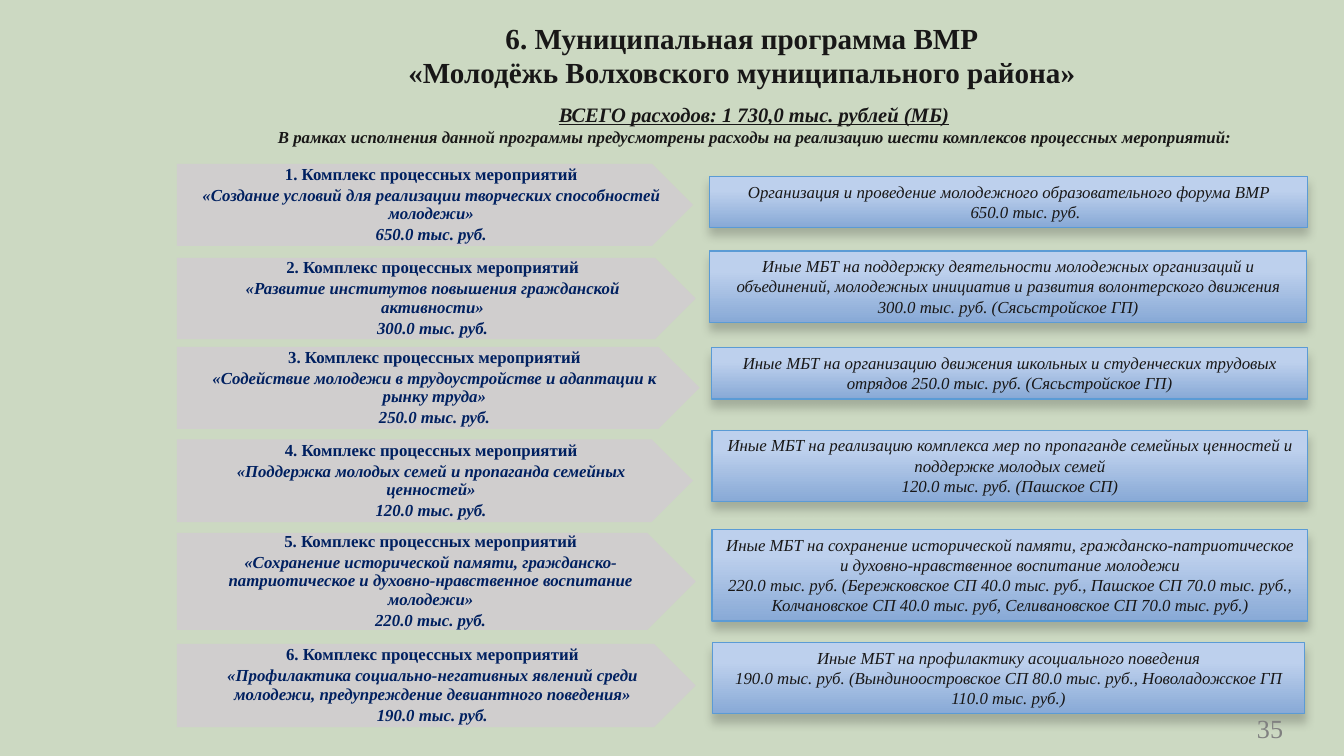
from pptx import Presentation
from pptx.dml.color import RGBColor
from pptx.enum.shapes import MSO_SHAPE
from pptx.enum.text import MSO_ANCHOR, MSO_AUTO_SIZE, PP_ALIGN
from pptx.oxml import parse_xml
from pptx.oxml.ns import nsdecls
from pptx.util import Pt

TITLE = "6. Муниципальная программа ВМР\v«Молодёжь Волховского муниципального района»"
TOTAL = "ВСЕГО расходов: 1 730,0 тыс. рублей (МБ)"
INTRO = ("В рамках исполнения данной программы предусмотрены расходы "
         "на реализацию шести комплексов процессных мероприятий:")
HEAD = "Комплекс процессных мероприятий"
PAGE = "35"

# Plate: name, sum, (top, width, height). Card: paragraphs, lines, (left, top, width).
ROWS = [
    ("«Создание условий для реализации творческих способностей молодежи»",
     "650.0 тыс. руб.", (87.8, 276.5, 43.9),
     ["Организация и проведение молодежного образовательного форума ВМР",
      "650.0 тыс. руб."], 2, (380.2, 94.5, 320.2)),
    ("«Развитие институтов повышения гражданской активности»",
     "300.0 тыс. руб.", (138.2, 277.9, 43.5),
     ["Иные МБТ на поддержку деятельности молодежных организаций и объединений, "
      "молодежных инициатив и развития волонтерского движения",
      "300.0 тыс. руб. (Сясьстройское ГП)"], 3, (380.2, 134.5, 319.6)),
    ("«Содействие молодежи в трудоустройстве и адаптации к рынку труда»",
     "250.0 тыс. руб.", (185.8, 280, 43.9),
     ["Иные МБТ на организацию движения школьных и студенческих трудовых "
      "отрядов 250.0 тыс. руб. (Сясьстройское ГП)"], 2, (381, 186.3, 319.5)),
    ("«Поддержка молодых семей и пропаганда семейных ценностей»",
     "120.0 тыс. руб.", (235.4, 276.5, 44.3),
     ["Иные МБТ на реализацию комплекса мер по пропаганде семейных ценностей "
      "и поддержке молодых семей",
      "120.0 тыс. руб. (Пашское СП)"], 3, (381.5, 230.5, 319)),
    ("«Сохранение исторической памяти, гражданско-патриотическое "
     "и духовно-нравственное воспитание молодежи»",
     "220.0 тыс. руб.", (285.5, 277.9, 52),
     ["Иные МБТ на сохранение исторической памяти, гражданско-патриотическое "
      "и духовно-нравственное воспитание молодежи",
      "220.0 тыс. руб. (Бережковское СП 40.0 тыс. руб., Пашское СП 70.0 тыс. руб., "
      "Колчановское СП 40.0 тыс. руб, Селивановское СП 70.0 тыс. руб.)"],
     4, (381.5, 283.7, 319)),
    ("«Профилактика социально-негативных явлений среди молодежи, "
     "предупреждение девиантного поведения»",
     "190.0 тыс. руб.", (345, 277.9, 44.5),
     ["Иные МБТ на профилактику асоциального поведения",
      "190.0 тыс. руб. (Вындиноостровское СП 80.0 тыс. руб., "
      "Новоладожское ГП 110.0 тыс. руб.)"], 3, (381.7, 344.2, 317)),
]


class Theme:
    font = "Times New Roman"
    back, ink, navy, gray = "CCD9C2", "181717", "002060", "808080"
    plate, light, deep, edge = "D0CECE", "BDD0ED", "88A9D6", "5B9BD5"
    title, total, text, page = 15.6, 11, 9, 14
    left, line, pad = 94.8, 10.8, 5.8


def rgb(code):
    return RGBColor.from_string(code)


def place(shape, left, top, width, height):
    shape.left, shape.top = Pt(left), Pt(top)
    shape.width, shape.height = Pt(width), Pt(height)


def write(shape, paras, color, anchor=MSO_ANCHOR.TOP, inset=5.1, fit=MSO_AUTO_SIZE.NONE):
    """Fill a shape with centred (text, size, bold, italic) paragraphs."""
    frame = shape.text_frame
    frame.word_wrap, frame.auto_size, frame.vertical_anchor = True, fit, anchor
    frame.margin_left = Pt(inset)
    frame.margin_right = Pt(min(inset, 5.1))
    frame.margin_top = frame.margin_bottom = Pt(2.6)
    for i, (text, size, bold, italic) in enumerate(paras):
        para = frame.paragraphs[0] if i == 0 else frame.add_paragraph()
        para.text, para.alignment, para.space_before = text, PP_ALIGN.CENTER, Pt(0)
        font = para.font
        font.name, font.size, font.color.rgb = Theme.font, Pt(size), rgb(color)
        font.bold, font.italic = bold, italic
    return frame.paragraphs


def add_plate(slide, num, name, total, top, width, height):
    plate = slide.shapes.add_shape(MSO_SHAPE.PENTAGON, Pt(Theme.left), Pt(top),
                                   Pt(width), Pt(height))
    plate.shadow.inherit = False
    plate.fill.solid()
    plate.fill.fore_color.rgb = rgb(Theme.plate)
    plate.line.fill.background()
    paras = write(plate, [(f"{num}. {HEAD}", Theme.text, True, False),
                          (name, Theme.text, True, True),
                          (total, Theme.text, True, True)],
                  Theme.navy, MSO_ANCHOR.MIDDLE, 9.4)
    plate.text_frame.margin_right = Pt(2.6)
    for para in paras:
        para.line_spacing, para.space_after = 0.9, Pt(1.5)


def add_card(slide, texts, lines, left, top, width):
    card = slide.shapes.add_shape(MSO_SHAPE.RECTANGLE, Pt(left), Pt(top), Pt(width),
                                  Pt(Theme.pad + Theme.line * lines))
    card.fill.gradient()
    card.fill.gradient_angle = 270
    for stop, pos, code in zip(card.fill.gradient_stops, (0.28, 1),
                               (Theme.light, Theme.deep)):
        stop.position, stop.color.rgb = pos, rgb(code)
    card.line.color.rgb, card.line.width = rgb(Theme.edge), Pt(0.75)
    card.shadow.inherit = False
    glow = parse_xml(
        f'<a:outerShdw {nsdecls("a")} blurRad="{Pt(5)}" dist="{Pt(4)}" dir="5400000" '
        'rotWithShape="0"><a:srgbClr val="000000"><a:alpha val="20000"/>'
        '</a:srgbClr></a:outerShdw>')
    card._element.spPr.find("{*}effectLst").append(glow)
    return write(card, [(text, Theme.text, False, True) for text in texts],
                 Theme.ink, fit=MSO_AUTO_SIZE.SHAPE_TO_FIT_TEXT)


def main():
    deck = Presentation()
    deck.slide_width, deck.slide_height = Pt(720), Pt(405)
    slide = deck.slides.add_slide(deck.slide_layouts[1])
    slide.background.fill.solid()
    slide.background.fill.fore_color.rgb = rgb(Theme.back)

    title, body = slide.placeholders
    place(title, 144.5, 6, 506, 46.8)
    write(title, [(TITLE, Theme.title, True, False)], Theme.ink, MSO_ANCHOR.MIDDLE)

    place(body, 92, 52, 624, 43)
    for para in write(body, [(TOTAL, Theme.total, True, True),
                             (INTRO, Theme.text, True, True)], Theme.ink):
        props = para._p.get_or_add_pPr()
        props.set("marL", "0")
        props.set("indent", "0")
        props.find("{*}defRPr").addprevious(parse_xml(f'<a:buNone {nsdecls("a")}/>'))
    body.text_frame.paragraphs[0].font.underline = True

    cards = []
    for num, (name, total, plate, texts, lines, card) in enumerate(ROWS, 1):
        add_plate(slide, num, name, total, *plate)
        cards.append(add_card(slide, texts, lines, *card))
    cards[0][1]._p.get_or_add_pPr().set("marL", str(Pt(18)))

    page = slide.shapes.add_textbox(Pt(643.7), Pt(385.2), Pt(73.4), Pt(10.1))
    write(page, [(PAGE, Theme.page, False, False)], Theme.gray, MSO_ANCHOR.MIDDLE)
    deck.save("out.pptx")


if __name__ == "__main__":
    main()
